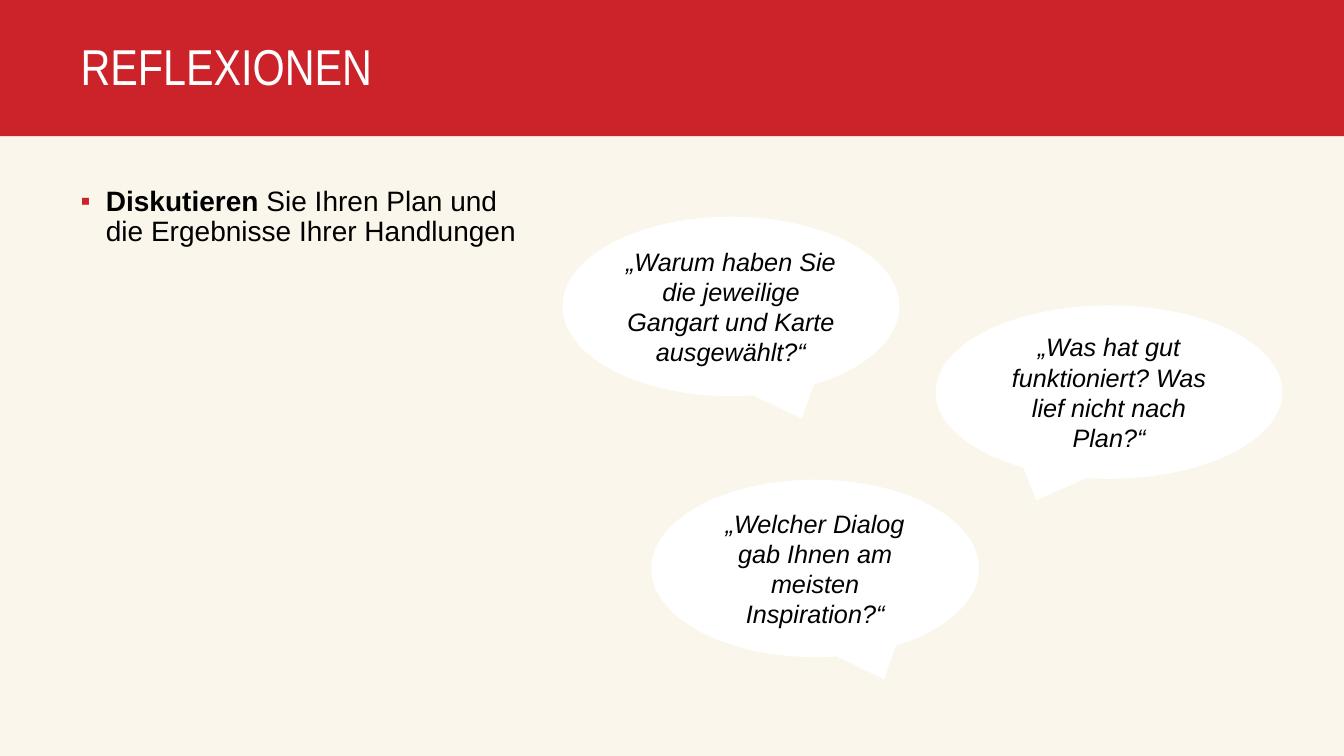
"""Build the slide of reflections with three speech bubbles."""
from lxml.etree import SubElement
from pptx import Presentation
from pptx.dml.color import RGBColor
from pptx.enum.shapes import MSO_SHAPE
from pptx.enum.text import MSO_ANCHOR, MSO_AUTO_SIZE, PP_ALIGN
from pptx.oxml.ns import qn
from pptx.util import Inches, Pt

RED, CREAM, WHITE, BLACK = "CC222A", "F6EFD9", "FFFFFF", "000000"
WIDE, HIGH, BAND, LEFT = 13.33, 7.5, 1.35, 0.7


def paint(item, tint):
    item.fill.solid()
    item.fill.fore_color.rgb = RGBColor.from_string(tint)


def style(font, tint, **form):
    for key, value in form.items():
        setattr(font, key, value)
    paint(font, tint)


deck = Presentation()
deck.slide_width, deck.slide_height = Inches(WIDE), Inches(HIGH)
slide = deck.slides.add_slide(deck.slide_layouts[1])
shapes = slide.shapes
title, body = shapes.title, slide.placeholders[1]

for row, (top, high, tint) in enumerate([(BAND, HIGH - BAND, CREAM), (0, BAND, RED)]):
    panel = shapes.add_shape(MSO_SHAPE.RECTANGLE, 0, Inches(top), Inches(WIDE), Inches(high))
    panel.shadow.inherit = False
    panel.line.fill.background()
    paint(panel, tint)
    shapes._spTree.insert(2 + row, panel._element)
    if tint == CREAM:
        shade = panel._element.spPr.find(".//" + qn("a:srgbClr"))
        SubElement(shade, qn("a:alpha"), val="50000")

for holder, box, anchor in [
    (title, (LEFT, 0.09, 11.92, 1.19), MSO_ANCHOR.MIDDLE),
    (body, (LEFT, 1.81, 4.61, 5.16), MSO_ANCHOR.TOP),
]:
    holder.left, holder.top, holder.width, holder.height = map(Inches, box)
    frame = holder.text_frame
    frame.auto_size = MSO_AUTO_SIZE.NONE
    frame.word_wrap = True
    frame.vertical_anchor = anchor
    para = frame.paragraphs[0]
    for key, value in {"alignment": PP_ALIGN.LEFT, "line_spacing": 0.9, "space_before": Pt(0)}.items():
        setattr(para, key, value)

head = title.text_frame.paragraphs[0].add_run()
head.text = "REFLEXIONEN"
style(head.font, WHITE, name="Arial Narrow", size=Pt(36))

item = body.text_frame.paragraphs[0]
props = item._p.get_or_add_pPr()
props.set("marL", str(Inches(0.25)))
props.set("indent", str(Inches(-0.25)))
SubElement(SubElement(props, qn("a:buClr")), qn("a:srgbClr"), val=RED)
SubElement(props, qn("a:buFont"), typeface="Arial")
SubElement(props, qn("a:buChar"), char="▪")
for text, bold in [("Diskutieren", True), (" Sie Ihren Plan und die Ergebnisse Ihrer Handlungen", False)]:
    run = item.add_run()
    run.text = text
    style(run.font, BLACK, name="Arial", size=Pt(20), bold=bold)

for box, side, text in [
    ((5.58, 2.15, 3.34, 1.78), 1, "„Warum haben Sie die jeweilige Gangart und Karte ausgewählt?“"),
    ((9.28, 3.03, 3.44, 1.72), -1, "„Was hat gut funktioniert? Was lief nicht nach Plan?“"),
    ((6.46, 4.76, 3.25, 1.76), 1, "„Welcher Dialog gab Ihnen am meisten Inspiration?“"),
]:
    bubble = shapes.add_shape(MSO_SHAPE.OVAL_CALLOUT, *map(Inches, box))
    bubble.adjustments[0] = side * 0.21
    bubble.adjustments[1] = 0.625
    bubble.shadow.inherit = False
    bubble.line.fill.background()
    paint(bubble, WHITE)
    frame = bubble.text_frame
    frame.word_wrap = True
    frame.vertical_anchor = MSO_ANCHOR.MIDDLE
    para = frame.paragraphs[0]
    para.alignment = PP_ALIGN.CENTER
    quote = para.add_run()
    quote.text = text
    style(quote.font, BLACK, name="Arial", size=Pt(18), italic=True)

deck.save("out.pptx")
